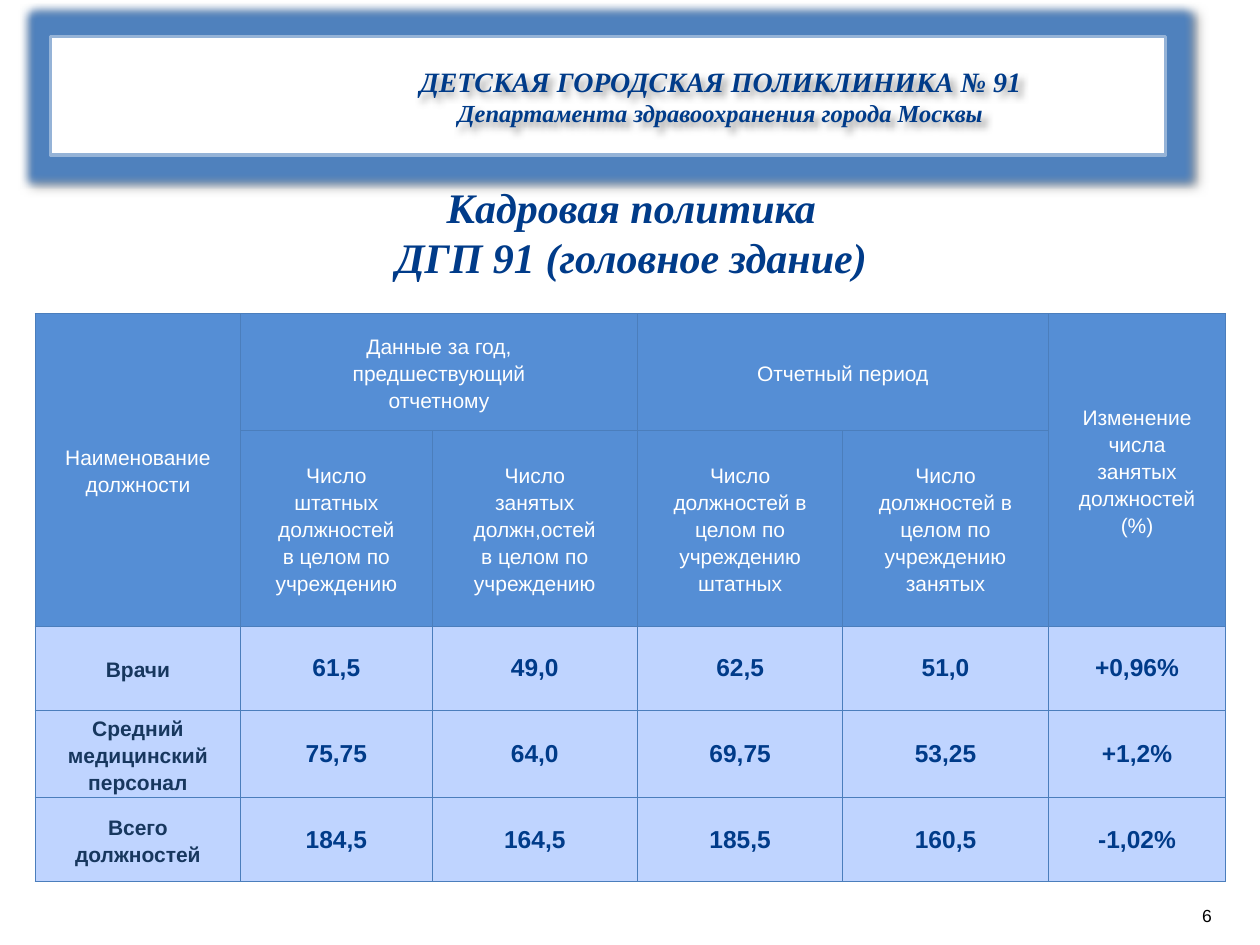
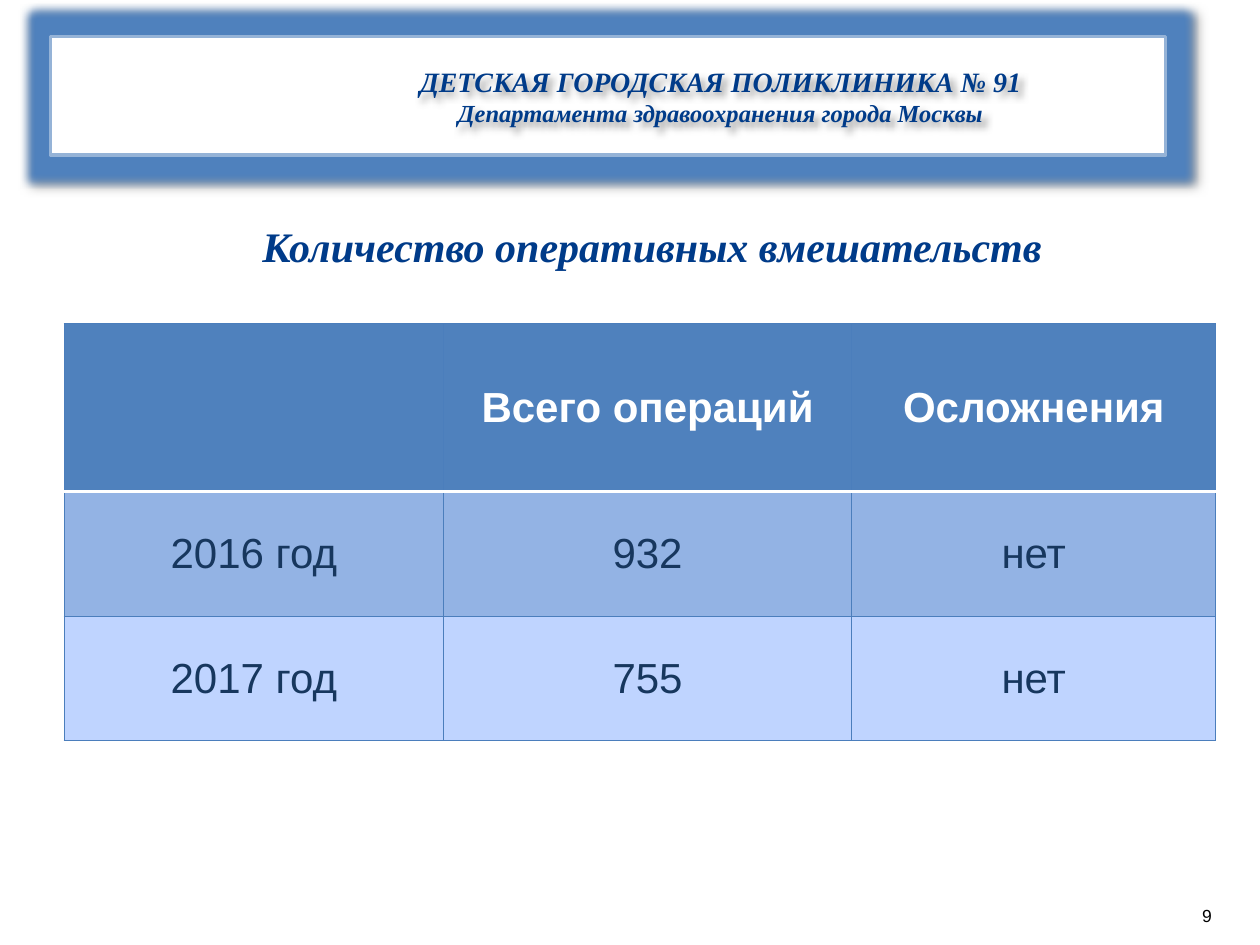
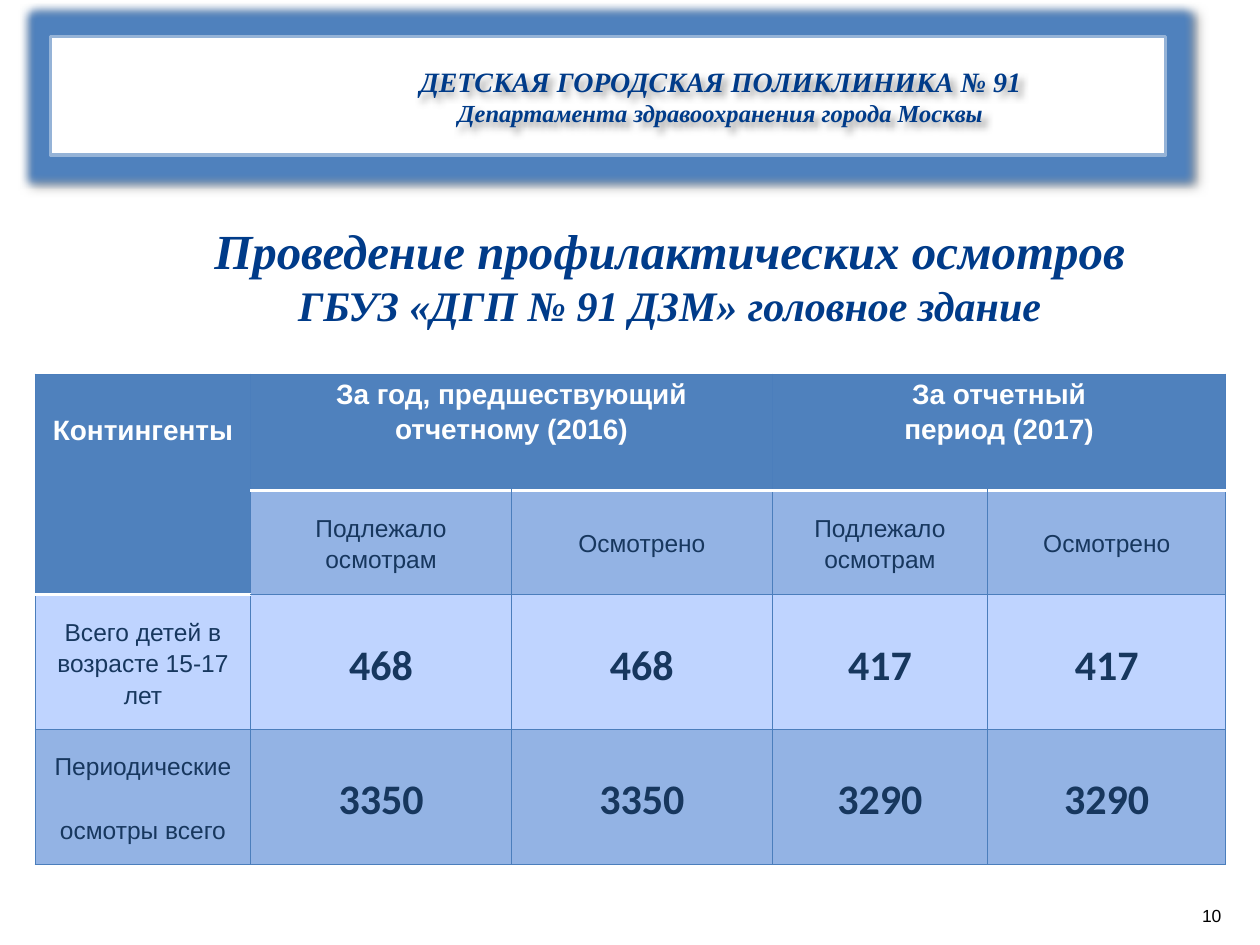
from dataclasses import dataclass
from typing import Optional

from pptx import Presentation
from pptx.dml.color import RGBColor
from pptx.enum.shapes import MSO_SHAPE
from pptx.enum.text import MSO_ANCHOR, MSO_AUTO_SIZE, PP_ALIGN
from pptx.oxml import parse_xml
from pptx.oxml.ns import nsdecls, qn
from pptx.util import Inches, Pt

RECTANGLE = MSO_SHAPE.RECTANGLE
TOP, MIDDLE = MSO_ANCHOR.TOP, MSO_ANCHOR.MIDDLE
LEFT, CENTER = PP_ALIGN.LEFT, PP_ALIGN.CENTER
NO_AUTOFIT = MSO_AUTO_SIZE.NONE

BLACK = RGBColor(0x00, 0x00, 0x00)
WHITE = RGBColor(0xFF, 0xFF, 0xFF)
NAVY = RGBColor(0x00, 0x3B, 0x89)
INK = RGBColor(0x17, 0x37, 0x5E)
BAND_EDGE = RGBColor(0x95, 0xB3, 0xD7)
GLOW = RGBColor(0x4F, 0x81, 0xBD)
GRID_LINE = RGBColor(0x4B, 0x7E, 0xBC)
HEAD_BLUE = RGBColor(0x55, 0x8E, 0xD5)
HEAD_STEEL = RGBColor(0x4F, 0x81, 0xBD)
ROW_DARK = RGBColor(0x93, 0xB3, 0xE4)
ROW_LIGHT = RGBColor(0xBF, 0xD4, 0xFF)

SERIF, SANS, DIGITS = "Times New Roman", "Arial", "Calibri"
GRID_COLUMNS, GRID_ROWS = 100, 75
UNIT = Inches(0.1)
CELL_INSET = Inches(0.05)
THIN, RULE = Pt(0.75), Pt(2)


def units(count: float) -> int:
    return round(UNIT * count)


@dataclass(frozen=True)
class Area:
    column: float
    row: float
    columns: float
    rows: float

    def place(self) -> tuple[int, int, int, int]:
        return (units(self.column), units(self.row),
                units(self.columns), units(self.rows))


@dataclass(frozen=True)
class Line:
    text: str
    size: float
    color: RGBColor = NAVY
    font: str = SERIF
    bold: bool = True
    italic: bool = True


@dataclass(frozen=True)
class CellStyle:
    fill: RGBColor
    size: float
    color: RGBColor = INK
    font: str = SANS
    bold: bool = False
    spacing: Optional[float] = 1.15
    anchor: MSO_ANCHOR = MIDDLE
    top_inset: float = 0
    paragraph_gap: float = 0
    white_rule: bool = False


@dataclass(frozen=True)
class TableSpec:
    column: float
    row: float
    widths: list[float]
    heights: list[float]
    styles: list[str]
    texts: list[list[str]]
    spans: list[tuple[int, int, int, int]]


@dataclass(frozen=True)
class Page:
    number: str
    title: list[Line]
    title_area: Area
    table: TableSpec


BAND = Area(4, 2.9, 88.5, 9.4)
BAND_TEXT = Area(14.6, 2.1, 85.2, 11.1)
PAGE_NUMBER = Area(95.4, 71.8, 2.3, 1.7)
CLINIC = [Line("ДЕТСКАЯ ГОРОДСКАЯ ПОЛИКЛИНИКА № 91", 16),
          Line("Департамента здравоохранения города Москвы", 14)]

STYLES = {
    "h": CellStyle(HEAD_BLUE, 12, WHITE),
    "n": CellStyle(ROW_LIGHT, 12, bold=True),
    "v": CellStyle(ROW_LIGHT, 14, NAVY, bold=True, spacing=None),
    "H": CellStyle(HEAD_STEEL, 24, WHITE, bold=True, spacing=None, white_rule=True),
    "D": CellStyle(ROW_DARK, 24, spacing=None),
    "L": CellStyle(ROW_LIGHT, 24, spacing=None),
    "C": CellStyle(HEAD_STEEL, 16, WHITE, bold=True, anchor=TOP, top_inset=0.29,
                   white_rule=True),
    "P": CellStyle(HEAD_STEEL, 16, WHITE, bold=True, anchor=TOP, white_rule=True),
    "s": CellStyle(ROW_DARK, 14, paragraph_gap=18.5),
    "a": CellStyle(ROW_LIGHT, 14),
    "x": CellStyle(ROW_LIGHT, 24, font=DIGITS, bold=True),
    "y": CellStyle(ROW_DARK, 24, font=DIGITS, bold=True),
}

STAFF = TableSpec(
    2.8, 24.9,
    [16.3, 15.2, 16.3, 16.3, 16.3, 14.1], [9.3, 15.5, 6.7, 6.9, 6.7],
    ["hhhhhh", "hhhhhh", "nvvvvv", "nvvvvv", "nvvvvv"],
    [["Наименование\vдолжности", "Данные за год,\vпредшествующий\vотчетному", "",
      "Отчетный период", "", "Изменение\vчисла\vзанятых\vдолжностей\v(%)"],
     ["", "Число\vштатных\vдолжностей\vв целом по\vучреждению",
      "Число\vзанятых\vдолжн,остей\vв целом по\vучреждению",
      "Число\vдолжностей в\vцелом по\vучреждению\vштатных",
      "Число\vдолжностей в\vцелом по\vучреждению\vзанятых", ""],
     ["Врачи", "61,5", "49,0", "62,5", "51,0", "+0,96%"],
     ["Средний\vмедицинский\vперсонал", "75,75", "64,0", "69,75", "53,25", "+1,2%"],
     ["Всего\vдолжностей", "184,5", "164,5", "185,5", "160,5", "-1,02%"]],
    [(0, 0, 1, 0), (0, 1, 0, 2), (0, 3, 0, 4), (0, 5, 1, 5)])

OPERATIONS = TableSpec(
    5.1, 25.7,
    [30.1, 32.4, 28.9], [13.3, 9.9, 9.9],
    ["HHH", "DDD", "LLL"],
    [["", "Всего операций", "Осложнения"],
     ["2016 год", "932", "нет"],
     ["2017 год", "755", "нет"]],
    [])

CHECKUPS = TableSpec(
    2.8, 29.7,
    [17.1, 20.7, 20.7, 17.1, 18.9], [9.2, 8.3, 10.7, 10.7],
    ["CPPPP", "Cssss", "axxxx", "syyyy"],
    [["Контингенты", "За год, предшествующий\vотчетному (2016)", "",
      "За отчетный\vпериод (2017)", ""],
     ["", "Подлежало\vосмотрам", "Осмотрено", "Подлежало\vосмотрам", "Осмотрено"],
     ["Всего детей в\vвозрасте 15-17 лет", "468", "468", "417", "417"],
     ["Периодические\nосмотры всего", "3350", "3350", "3290", "3290"]],
    [(0, 0, 1, 0), (0, 1, 0, 2), (0, 3, 0, 4)])

PAGES = [
    Page("6", [Line("Кадровая политика\vДГП 91 (головное здание)", 24)],
         Area(30.2, 13.9, 39.8, 9.1), STAFF),
    Page("9", [Line("Количество оперативных вмешательств", 24)],
         Area(19.5, 17, 64.5, 5.1), OPERATIONS),
    Page("10", [Line("Проведение профилактических осмотров", 28),
                Line("ГБУЗ «ДГП № 91 ДЗМ» головное здание", 24)],
         Area(15.6, 17, 75.1, 10.4), CHECKUPS),
]


def write_lines(frame, lines: list[Line], align: PP_ALIGN, anchor: MSO_ANCHOR,
                wrap: bool) -> None:
    frame.auto_size = NO_AUTOFIT
    frame.word_wrap = wrap
    frame.vertical_anchor = anchor
    frame.text = "\n".join(line.text for line in lines)
    for paragraph, line in zip(frame.paragraphs, lines):
        paragraph.alignment = align
        font = paragraph.font
        font.name, font.size = line.font, Pt(line.size)
        font.bold, font.italic = line.bold, line.italic
        font.color.rgb = line.color


def add_effects(shape, glow: bool) -> None:
    shape.shadow.inherit = False
    effects = shape.element.spPr.find(qn("a:effectLst"))
    if glow:
        effects.append(parse_xml(
            f'<a:glow {nsdecls("a")} rad="{Pt(9)}"><a:srgbClr val="{GLOW}"/></a:glow>'))
    effects.append(parse_xml(
        f'<a:outerShdw {nsdecls("a")} blurRad="{Pt(4)}" dist="{Pt(3)}" dir="2700000" '
        'algn="tl" rotWithShape="0"><a:srgbClr val="000000"><a:alpha val="40000"/>'
        '</a:srgbClr></a:outerShdw>'))


def add_clinic_band(slide) -> None:
    band = slide.shapes.add_shape(RECTANGLE, *BAND.place())
    band.fill.solid()
    band.fill.fore_color.rgb = WHITE
    band.line.color.rgb = BAND_EDGE
    band.line.width = RULE
    add_effects(band, glow=True)
    clinic = slide.shapes.add_textbox(*BAND_TEXT.place())
    write_lines(clinic.text_frame, CLINIC, CENTER, MIDDLE, wrap=True)
    add_effects(clinic, glow=False)


def add_page_number(slide, number: str) -> None:
    frame = slide.shapes.add_textbox(*PAGE_NUMBER.place()).text_frame
    frame.margin_left = frame.margin_right = frame.margin_top = frame.margin_bottom = 0
    write_lines(frame, [Line(number, 10, BLACK, SANS, False, False)], LEFT, MIDDLE,
                wrap=False)


def place_title(slide, page: Page) -> None:
    title = slide.shapes.title
    title.left, title.top, title.width, title.height = page.title_area.place()
    write_lines(title.text_frame, page.title, CENTER, TOP, wrap=False)


def add_border(cell, edge: str, white: bool) -> None:
    color, width = (WHITE, RULE) if white else (GRID_LINE, THIN)
    cell._tc.get_or_add_tcPr().append(parse_xml(
        f'<a:{edge} {nsdecls("a")} w="{width}"><a:solidFill><a:srgbClr val="{color}"/>'
        f'</a:solidFill></a:{edge}>'))


def format_cell(cell, text: str, style: CellStyle, rule_above: bool,
                rule_below: bool) -> None:
    for edge, white in (("lnL", False), ("lnR", False),
                        ("lnT", rule_above), ("lnB", rule_below)):
        add_border(cell, edge, white)
    cell.fill.solid()
    cell.fill.fore_color.rgb = style.fill
    cell.margin_left = cell.margin_right = CELL_INSET
    cell.margin_top, cell.margin_bottom = Inches(style.top_inset), 0
    cell.vertical_anchor = style.anchor
    cell.text_frame.text = text
    for index, paragraph in enumerate(cell.text_frame.paragraphs):
        paragraph.alignment = CENTER
        if style.spacing:
            paragraph.line_spacing = style.spacing
        if index:
            paragraph.space_before = Pt(style.paragraph_gap)
        font = paragraph.font
        font.name, font.size = style.font, Pt(style.size)
        font.bold, font.italic = style.bold, False
        font.color.rgb = style.color


def add_data_table(slide, spec: TableSpec) -> None:
    area = Area(spec.column, spec.row, sum(spec.widths), sum(spec.heights))
    table = slide.shapes.add_table(len(spec.heights), len(spec.widths),
                                   *area.place()).table
    table.first_row = table.horz_banding = False
    for column, width in zip(table.columns, spec.widths):
        column.width = units(width)
    for row, height in zip(table.rows, spec.heights):
        row.height = units(height)

    def ruled(row: int, column: int) -> bool:
        return (0 <= row < len(spec.styles)
                and STYLES[spec.styles[row][column]].white_rule)

    for r, row_texts in enumerate(spec.texts):
        for c, text in enumerate(row_texts):
            here = ruled(r, c)
            format_cell(table.cell(r, c), text, STYLES[spec.styles[r][c]],
                        ruled(r - 1, c) and not here,
                        here and not ruled(r + 1, c))
    for top, left, bottom, right in spec.spans:
        table.cell(top, left).merge(table.cell(bottom, right))


def main() -> None:
    presentation = Presentation()
    presentation.slide_width = units(GRID_COLUMNS)
    presentation.slide_height = units(GRID_ROWS)
    title_only = presentation.slide_layouts[5]
    for page in PAGES:
        slide = presentation.slides.add_slide(title_only)
        add_page_number(slide, page.number)
        add_clinic_band(slide)
        place_title(slide, page)
        add_data_table(slide, page.table)
    presentation.save("out.pptx")


if __name__ == "__main__":
    main()
